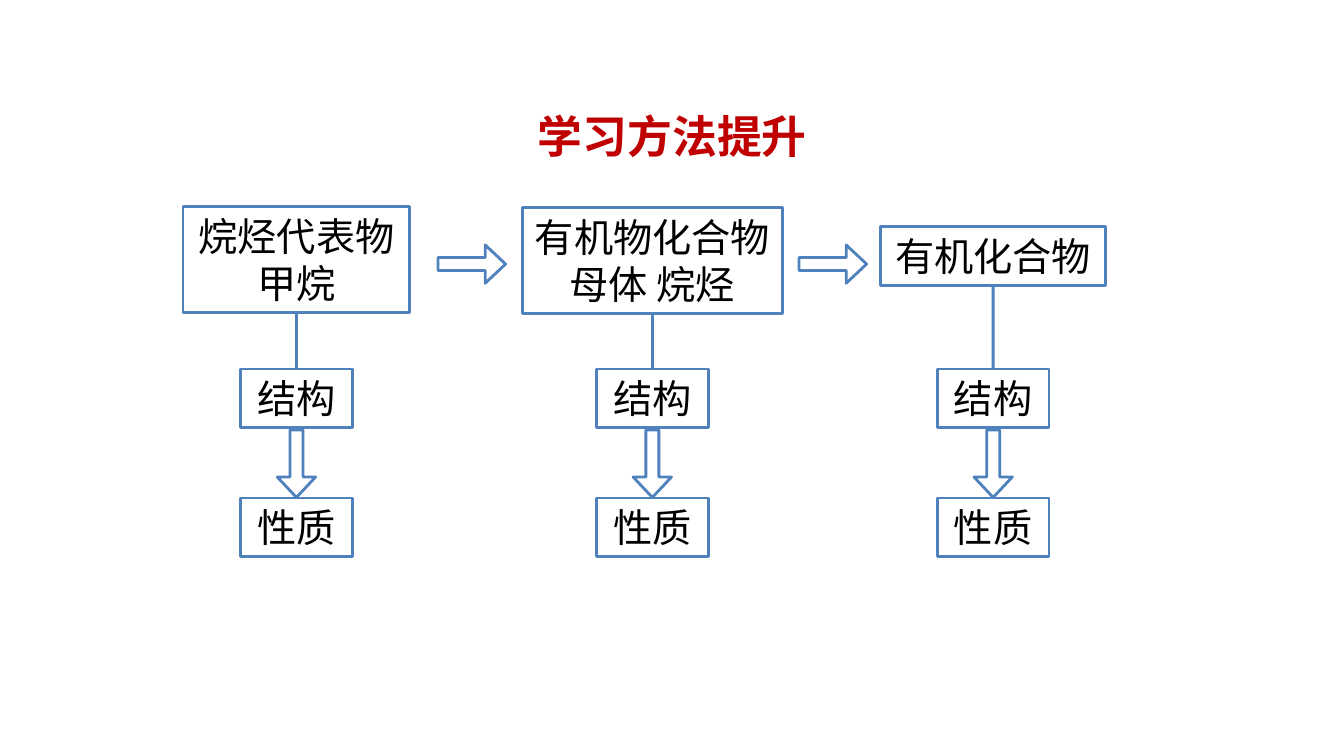
from lxml.etree import SubElement
from pptx import Presentation
from pptx.dml.color import RGBColor
from pptx.enum.shapes import MSO_CONNECTOR, MSO_SHAPE
from pptx.enum.text import MSO_ANCHOR, MSO_AUTO_SIZE, PP_ALIGN
from pptx.oxml.ns import qn
from pptx.util import Inches, Pt

# Content: topic lines, column centre, then topic top, width and height
TITLE = "学习方法提升"
TOPICS = [
    (["烷烃代表物", "甲烷"], 2.94, 2.05, 2.25, 1.05),
    (["有机物化合物母体 烷烃"], 6.47, 2.06, 2.58, 1.05),
    (["有机化合物"], 9.85, 2.25, 2.23, 0.58),
]
STEPS = [("结构", 3.66), ("性质", 4.94)]
STEP_WIDTH, STEP_HEIGHT = 1.11, 0.58

# Arrow size and centres
ARROW_WIDTH, ARROW_HEIGHT = 0.67, 0.38
ACROSS_CENTRES, ACROSS_Y = (4.68, 8.26), 2.62
DOWN_Y = (STEPS[0][1] + STEP_HEIGHT + STEPS[1][1]) / 2 + 0.01

RED = RGBColor(0xC0, 0x00, 0x00)
BLUE = RGBColor(0x4F, 0x81, 0xBD)
BLACK = RGBColor(0x00, 0x00, 0x00)
WHITE = RGBColor(0xFF, 0xFF, 0xFF)
TITLE_FONT = {"name": "Calibri", "size": Pt(32), "bold": True}
BOX_FONT = {"name": "Noto Sans CJK SC", "size": Pt(28), "bold": False}
BOX_FRAME = {
    "word_wrap": True,
    "vertical_anchor": MSO_ANCHOR.MIDDLE,
    "auto_size": MSO_AUTO_SIZE.SHAPE_TO_FIT_TEXT,
    **{f"margin_{side}": Inches(0.06) for side in ("left", "top", "right", "bottom")},
}


def apply(target, values):
    for key, value in values.items():
        setattr(target, key, value)


def write(frame, lines, font, colour):
    frame.text = "\n".join(lines)
    for paragraph in frame.paragraphs:
        paragraph.alignment = PP_ALIGN.CENTER
        for run in paragraph.runs:
            apply(run.font, font)
            run.font.color.rgb = colour
            SubElement(run.font._element, qn("a:ea"), typeface=font["name"])


def add_outlined(kind, centre, top, width, height):
    outlined = slide.shapes.add_shape(
        kind, Inches(centre - width / 2), Inches(top), Inches(width), Inches(height))
    outlined.shadow.inherit = False
    outlined.fill.solid()
    outlined.fill.fore_color.rgb = WHITE
    outlined.line.color.rgb = BLUE
    outlined.line.width = Pt(2)
    return outlined


def add_box(lines, *place):
    box = add_outlined(MSO_SHAPE.RECTANGLE, *place)
    write(box.text_frame, lines, BOX_FONT, BLACK)
    apply(box.text_frame, BOX_FRAME)
    return box


def add_arrow(centre, middle, rotation=0):
    arrow = add_outlined(MSO_SHAPE.RIGHT_ARROW, centre, middle - ARROW_HEIGHT / 2,
                         ARROW_WIDTH, ARROW_HEIGHT)
    arrow.adjustments[0], arrow.adjustments[1] = 0.339, 0.532
    arrow.rotation = rotation


def join(upper, lower):
    link = slide.shapes.add_connector(MSO_CONNECTOR.STRAIGHT, 0, 0, 0, 0)
    link.begin_connect(upper, 2)
    link.end_connect(lower, 0)
    link.line.color.rgb = BLUE
    link.line.width = Pt(2)
    SubElement(link._element.spPr, qn("a:effectLst"))


presentation = Presentation()
presentation.slide_width, presentation.slide_height = Inches(13.33), Inches(7.5)
slide = presentation.slides.add_slide(presentation.slide_layouts[5])

# Title
title = slide.shapes.title
apply(title, {"left": Inches(2.08), "top": Inches(0.87),
              "width": Inches(9.18), "height": Inches(0.95)})
write(title.text_frame, [TITLE], TITLE_FONT, RED)
title.text_frame.vertical_anchor = MSO_ANCHOR.MIDDLE

# Columns: topic, structure, properties
for lines, centre, top, width, height in TOPICS:
    topic = add_box(lines, centre, top, width, height)
    structure, properties = [
        add_box([label], centre, step_top, STEP_WIDTH, STEP_HEIGHT)
        for label, step_top in STEPS]
    join(topic, structure)
    add_arrow(centre, DOWN_Y, 90)

# Arrows from topic to topic
for centre in ACROSS_CENTRES:
    add_arrow(centre, ACROSS_Y)

presentation.save("out.pptx")
